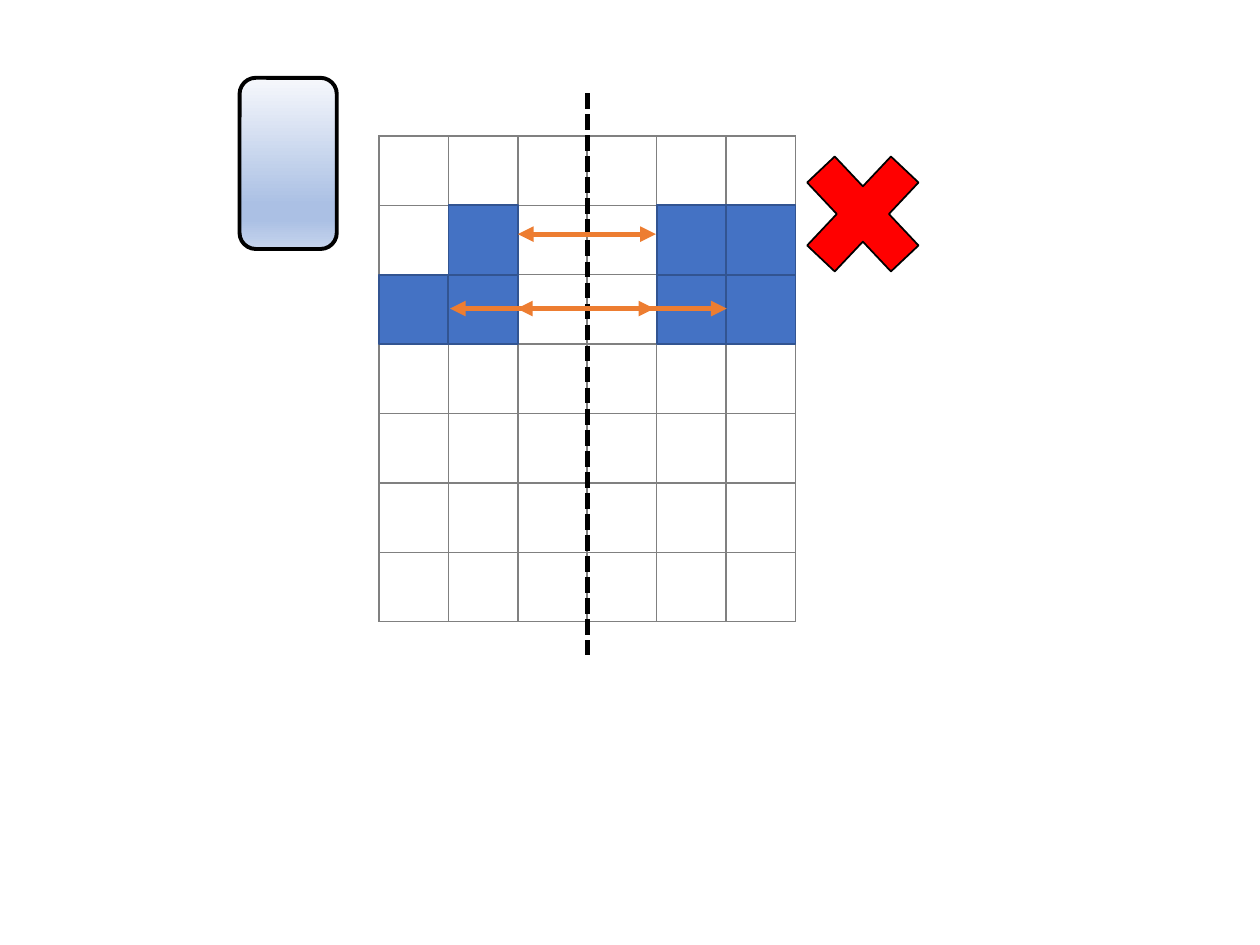
from lxml.etree import SubElement
from pptx import Presentation
from pptx.dml.color import RGBColor
from pptx.enum.dml import MSO_LINE
from pptx.enum.shapes import MSO_CONNECTOR, MSO_SHAPE
from pptx.oxml import parse_xml
from pptx.oxml.ns import nsdecls, qn
from pptx.util import Cm, Pt

BLACK = RGBColor(0x00, 0x00, 0x00)
GRAY = RGBColor(0x80, 0x80, 0x80)
BLUE = RGBColor(0x44, 0x72, 0xC4)
DARK_BLUE = RGBColor(0x32, 0x54, 0x91)
ORANGE = RGBColor(0xED, 0x7D, 0x31)
RED = RGBColor(0xFF, 0x00, 0x00)
PANEL_STOPS = [
    (0, RGBColor(0xF6, 0xF8, 0xFC)),
    (74, RGBColor(0xAB, 0xC0, 0xE4)),
    (83, RGBColor(0xAB, 0xC0, 0xE4)),
    (100, RGBColor(0xC7, 0xD5, 0xED)),
]

ROWS, COLUMNS = 7, 6
CELL = 1.4
GRID_LEFT, GRID_TOP = 7.64, 2.74
AXIS_X = GRID_LEFT + CELL * COLUMNS / 2
AXIS_TOP, AXIS_BOTTOM = 1.88, 13.21

FILLED_CELLS = [(1, 1), (2, 0), (2, 1), (1, 4), (1, 5), (2, 4), (2, 5)]
ARROW_REACHES = [
    (4.72, [-1.4, 1.38]),
    (6.22, [-2.77, 2.81, -1.42, 1.35]),
]
CROSS_BOX = (15.77, 2.59, 3.25, 3.45)
PANEL_BOX = (4.83, 1.57, 1.96, 3.45)


def add_grid(slide):
    grid = slide.shapes.add_table(
        ROWS, COLUMNS, Cm(GRID_LEFT), Cm(GRID_TOP), Cm(CELL * COLUMNS), Cm(CELL * ROWS)
    ).table
    grid.first_row = False
    grid.horz_banding = False
    for band in [*grid.columns]:
        band.width = Cm(CELL)
    for band in [*grid.rows]:
        band.height = Cm(CELL)
    for cell in grid.iter_cells():
        properties = cell._tc.get_or_add_tcPr()
        for side in ("a:lnL", "a:lnR", "a:lnT", "a:lnB"):
            border = SubElement(properties, qn(side), w=str(Pt(1)))
            paint = SubElement(border, qn("a:solidFill"))
            SubElement(paint, qn("a:srgbClr"), val=str(GRAY))
        cell.fill.background()


def add_figure(slide, preset, box, fill, outline, weight):
    figure = slide.shapes.add_shape(preset, *(Cm(length) for length in box))
    figure.shadow.inherit = False
    if fill is not None:
        figure.fill.solid()
        figure.fill.fore_color.rgb = fill
    figure.line.color.rgb = outline
    figure.line.width = Pt(weight)
    return figure


def add_stroke(slide, start, end, color):
    stroke = slide.shapes.add_connector(
        MSO_CONNECTOR.STRAIGHT, *(Cm(length) for length in (*start, *end))
    )
    stroke.line.color.rgb = color
    stroke.line.width = Pt(3)
    SubElement(stroke._element.spPr, qn("a:effectLst"))
    return stroke


def add_panel(slide):
    panel = add_figure(slide, MSO_SHAPE.ROUNDED_RECTANGLE, PANEL_BOX, None, BLACK, 2.25)
    stops = "".join(
        f'<a:gs pos="{percent * 1000}"><a:srgbClr val="{color}"/></a:gs>'
        for percent, color in PANEL_STOPS
    )
    gradient = parse_xml(
        f'<a:gradFill {nsdecls("a")} rotWithShape="1"><a:gsLst>{stops}</a:gsLst>'
        '<a:lin ang="5400000" scaled="0"/></a:gradFill>'
    )
    panel._element.spPr.find(qn("a:prstGeom")).addnext(gradient)


def main():
    presentation = Presentation()
    presentation.slide_width, presentation.slide_height = Cm(25.4), Cm(19.05)
    slide = presentation.slides.add_slide(presentation.slide_layouts[6])

    add_grid(slide)
    axis = add_stroke(slide, (AXIS_X, AXIS_TOP), (AXIS_X, AXIS_BOTTOM), BLACK)
    axis.line.dash_style = MSO_LINE.SQUARE_DOT

    for row, column in FILLED_CELLS:
        box = (GRID_LEFT + column * CELL, GRID_TOP + row * CELL, CELL, CELL)
        add_figure(slide, MSO_SHAPE.RECTANGLE, box, BLUE, DARK_BLUE, 1)
    add_figure(slide, MSO_SHAPE.MATH_MULTIPLY, CROSS_BOX, RED, BLACK, 1)

    for y, reaches in ARROW_REACHES:
        for reach in reaches:
            arrow = add_stroke(slide, (AXIS_X, y), (AXIS_X + reach, y), ORANGE)
            SubElement(arrow.line._get_or_add_ln(), qn("a:tailEnd"), type="triangle")

    add_panel(slide)
    presentation.save("out.pptx")


if __name__ == "__main__":
    main()
